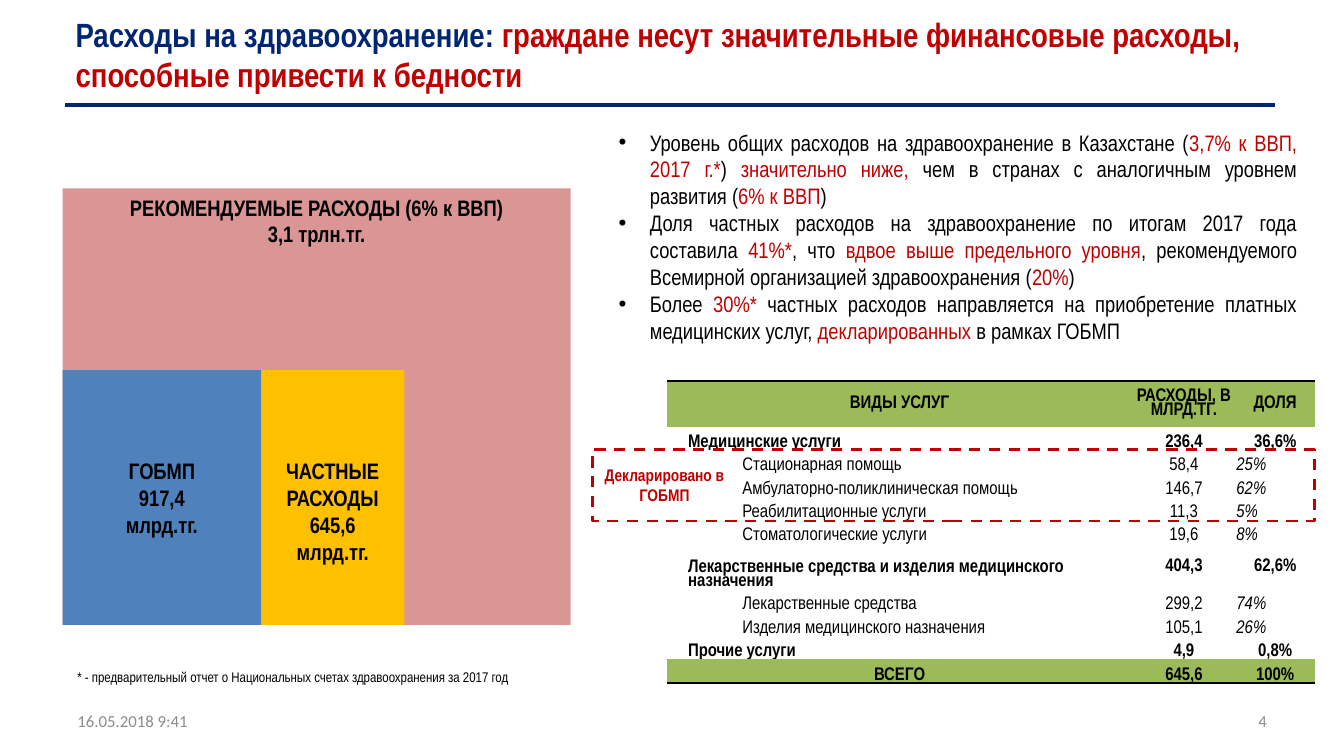
from lxml.etree import SubElement
from pptx import Presentation
from pptx.dml.color import RGBColor
from pptx.enum.dml import MSO_LINE_DASH_STYLE as Dash
from pptx.enum.shapes import MSO_CONNECTOR, MSO_SHAPE
from pptx.enum.text import MSO_ANCHOR as Anchor, MSO_AUTO_SIZE as AutoSize, PP_ALIGN as Align
from pptx.oxml import parse_xml
from pptx.oxml.ns import nsdecls, qn
from pptx.util import Cm, Pt

NAVY = RGBColor(0x00, 0x26, 0x73)
RED = RGBColor(0xC0, 0x00, 0x00)
BLACK = RGBColor(0x00, 0x00, 0x00)
WHITE = RGBColor(0xFF, 0xFF, 0xFF)
GREY = RGBColor(0x8C, 0x8C, 0x8C)
PINK = RGBColor(0xD9, 0x96, 0x94)
AMBER = RGBColor(0xFF, 0xC0, 0x00)
BLUE = RGBColor(0x4F, 0x81, 0xBD)
GREEN = RGBColor(0x9B, 0xBB, 0x59)
NO_GRID_STYLE = "{2D5ABB26-0587-4C30-8999-92F81FD0307C}"

# A bar separates plain text from text in the accent colour
TITLE = ("Расходы на здравоохранение: |граждане несут значительные "
         "финансовые расходы, способные привести к бедности")
FINDINGS = [
    "Уровень общих расходов на здравоохранение в Казахстане (|3,7% к ВВП, 2017 г.*|) "
    "|значительно ниже, |чем в странах с аналогичным уровнем развития (|6% к ВВП|)",
    "Доля частных расходов на здравоохранение по итогам 2017 года составила |41%*|, что "
    "|вдвое выше предельного уровня|, рекомендуемого Всемирной организацией "
    "здравоохранения (|20%|)",
    "Более |30%*| частных расходов направляется на приобретение платных медицинских "
    "услуг, |декларированных| в рамках ГОБМП",
]

# Each row: kind, service, spending, share
SERVICES = [
    ("head", "ВИДЫ УСЛУГ", "РАСХОДЫ, В МЛРД.ТГ.", "ДОЛЯ"),
    ("group", "Медицинские услуги", "236,4", "36,6%"),
    ("item", "Стационарная помощь", "58,4", "25%"),
    ("item", "Амбулаторно-поликлиническая помощь", "146,7", "62%"),
    ("item", "Реабилитационные услуги", "11,3", "5%"),
    ("item", "Стоматологические услуги", "19,6", "8%"),
    ("group", "Лекарственные средства и изделия медицинского назначения", "404,3", "62,6%"),
    ("item", "Лекарственные средства", "299,2", "74%"),
    ("item", "Изделия медицинского назначения", "105,1", "26%"),
    ("group", "Прочие услуги", "4,9", "0,8%"),
    ("total", "ВСЕГО", "645,6", "100%"),
]
TALL_ROWS = (0, 6)
NAME_COLUMN = {"head": 0, "group": 1, "item": 2, "total": 0}
COLUMN_WIDTHS = (0.51, 1.37, 9.86, 2.59, 2.01)


class SlideBuilder:
    def __init__(self, deck, font="Arial Narrow"):
        self.page = deck.slides.add_slide(deck.slide_layouts[5])
        self.shapes = self.page.shapes
        self.font = font

    def fill_text(self, frame, lines, size, color=BLACK, bold=False, italic=False,
                  align=Align.LEFT, font=None):
        frame.word_wrap = True
        for number, line in enumerate(lines):
            para = frame.paragraphs[0] if number == 0 else frame.add_paragraph()
            para.alignment = align
            for index, piece in enumerate(line.split("|")):
                span = para.add_run()
                span.text = piece
                span.font.name = font or self.font
                span.font.size = Pt(size)
                span.font.bold = bold
                span.font.italic = italic
                span.font.color.rgb = RED if index % 2 else color

    def title(self, text, place):
        title = self.shapes.title
        title.left, title.top, title.width, title.height = map(Cm, place)
        frame = title.text_frame
        frame.auto_size = AutoSize.NONE
        frame.vertical_anchor = Anchor.MIDDLE
        self.fill_text(frame, [text], 24, NAVY, bold=True)

    def rule(self, left, top, right):
        line = self.shapes.add_connector(
            MSO_CONNECTOR.STRAIGHT, Cm(left), Cm(top), Cm(right), Cm(top))
        line.line.color.rgb = NAVY
        line.line.width = Pt(3)
        SubElement(line._element.spPr, qn("a:effectLst"))

    def text(self, lines, place, size, anchor=Anchor.TOP, **style):
        frame = self.shapes.add_textbox(*map(Cm, place)).text_frame
        frame.vertical_anchor = anchor
        self.fill_text(frame, lines, size, **style)
        return frame

    def bullets(self, lines, place, size):
        frame = self.text(lines, place, size, align=Align.JUSTIFY)
        for para in frame.paragraphs:
            props = para._p.get_or_add_pPr()
            props.set("marL", str(Cm(0.79)))
            props.set("indent", str(-Cm(0.79)))
            SubElement(props, qn("a:buFont"), typeface="Arial")
            SubElement(props, qn("a:buChar"), char="•")

    def block(self, group, lines, place, fill, anchor=Anchor.MIDDLE, top_inset=0.13):
        box = group.shapes.add_shape(MSO_SHAPE.RECTANGLE, *map(Cm, place))
        box.shadow.inherit = False
        box.fill.solid()
        box.fill.fore_color.rgb = fill
        box.line.fill.background()
        box.text_frame.vertical_anchor = anchor
        box.text_frame.margin_top = Cm(top_inset)
        self.fill_text(box.text_frame, lines, 16, bold=True, align=Align.CENTER)

    def dashed_frame(self, place):
        box = self.shapes.add_shape(MSO_SHAPE.RECTANGLE, *map(Cm, place))
        box.shadow.inherit = False
        box.fill.background()
        box.line.color.rgb = RED
        box.line.width = Pt(2)
        box.line.dash_style = Dash.DASH

    def cell_border(self, cell, side):
        cell._tc.get_or_add_tcPr().insert(0, parse_xml(
            f'<a:{side} {nsdecls("a")} w="{Pt(2)}"><a:solidFill>'
            f'<a:srgbClr val="{BLACK}"/></a:solidFill></a:{side}>'))

    def prepare_cell(self, cell, fill, anchor):
        cell.fill.solid()
        cell.fill.fore_color.rgb = fill
        cell.vertical_anchor = anchor
        cell.margin_left = cell.margin_top = cell.margin_right = Cm(0.03)
        cell.margin_bottom = 0

    def table(self, rows, left, top):
        table = self.shapes.add_table(
            len(rows), len(COLUMN_WIDTHS), Cm(left), Cm(top),
            Cm(sum(COLUMN_WIDTHS)), Cm(7.6)).table
        table._tbl.tblPr.find(qn("a:tableStyleId")).text = NO_GRID_STYLE
        table.first_row = table.horz_banding = False
        for column, width in zip(table.columns, COLUMN_WIDTHS):
            column.width = Cm(width)
        for number, (kind, *values) in enumerate(rows):
            table.rows[number].height = Cm(1.15 if number in TALL_ROWS else 0.59)
            cells = [table.cell(number, column) for column in range(len(COLUMN_WIDTHS))]
            banner = kind in ("head", "total")
            for column, cell in enumerate(cells):
                middle = kind == "head" or (number in TALL_ROWS and column > 2)
                self.prepare_cell(cell, GREEN if banner else WHITE,
                                  Anchor.MIDDLE if middle else Anchor.BOTTOM)
                if banner:
                    self.cell_border(cell, "lnT" if kind == "head" else "lnB")
            start = NAME_COLUMN[kind]
            if start < 2:
                cells[start].merge(cells[2])
            item = kind == "item"
            aligns = (Align.CENTER if banner else Align.LEFT, Align.CENTER,
                      Align.LEFT if item else Align.CENTER)
            for column, value, align in zip((start, 3, 4), values, aligns):
                self.fill_text(cells[column].text_frame, [value], 13, bold=not item,
                               italic=item and column == 4, align=align)
                cells[column].text_frame.paragraphs[0].line_spacing = 0.8
            for cell in cells:
                if not cell.text_frame.text:
                    SubElement(cell.text_frame.paragraphs[0]._p,
                               qn("a:endParaRPr"), sz="1000")


def main():
    deck = Presentation()
    deck.slide_width, deck.slide_height = Cm(33.87), Cm(19.05)
    slide = SlideBuilder(deck)

    # Heading and footer
    slide.rule(1.65, 2.64, 32.13)
    slide.title(TITLE, (1.65, 0.33, 31.06, 2.06))
    for text, left, align in (("16.05.2018 9:41", 1.7, Align.LEFT),
                              ("4", 24.28, Align.RIGHT)):
        slide.text([text], (left, 17.65, 7.9, 1.02), 12, Anchor.MIDDLE,
                   color=GREY, align=align, font="Calibri")

    # Spending blocks
    blocks = slide.shapes.add_group_shape()
    slide.block(blocks, ["РЕКОМЕНДУЕМЫЕ РАСХОДЫ (6% к ВВП)", "3,1 трлн.тг."],
                (1.58, 4.75, 12.8, 11), PINK, Anchor.TOP)
    slide.block(blocks, ["ЧАСТНЫЕ РАСХОДЫ", "645,6", "млрд.тг."],
                (6.58, 9.33, 3.61, 6.42), AMBER, top_inset=0.81)
    slide.block(blocks, ["ГОБМП", "917,4", "млрд.тг."], (1.58, 9.33, 5, 6.42), BLUE)

    # Findings and footnote
    slide.bullets(FINDINGS, (15.34, 3.12, 17.6, 5.74), 16)
    slide.text(["* - предварительный отчет о Национальных счетах здравоохранения за 2017 год"],
               (1.7, 16.71, 11.9, 0.69), 10)

    # Table of services with the declared part framed
    slide.table(SERVICES, 16.8, 9.6)
    slide.dashed_frame((14.94, 11.33, 18.19, 1.8))
    slide.text(["Декларировано в ГОБМП"], (14.94, 11.58, 3.61, 1.27), 12,
               color=RED, bold=True, align=Align.CENTER)

    deck.save("out.pptx")


if __name__ == "__main__":
    main()
